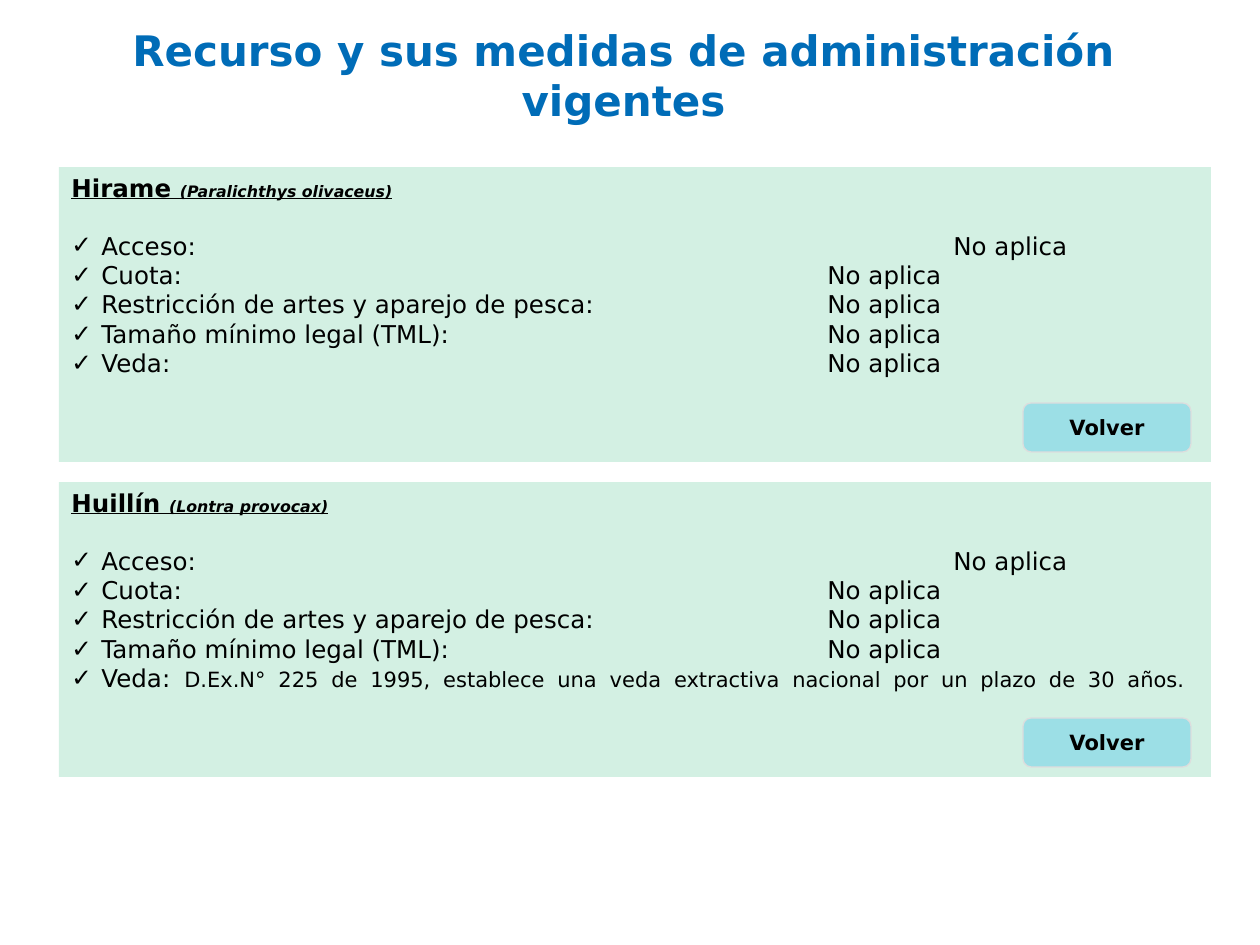
"""Builds the slide of two species and the management measures in force."""
from pptx import Presentation
from pptx.dml.color import RGBColor
from pptx.enum.shapes import MSO_SHAPE
from pptx.enum.text import MSO_ANCHOR, PP_ALIGN
from pptx.oxml.ns import qn
from pptx.util import Emu, Pt
from lxml.etree import SubElement

theme = {
    "font": "DejaVu Sans", "ink": "000000", "blue": "006CB7",
    "panel": "AAE2CA", "button": "00B0F0", "edge": "DDDDDD",
    "title": 24, "body": 14, "note": 12, "latin": 9,
}
scale = 914400 / 126


def write(para, text, size, color="ink", **form):
    run = para.add_run()
    run.text = text
    form.update(name=theme["font"], size=Pt(theme[size]))
    for key, value in form.items():
        setattr(run.font, key, value)
    run.font.color.rgb = RGBColor.from_string(theme[color])


def block(kind, box, color, alpha, anchor):
    shape = slide.shapes.add_shape(kind, *[Emu(round(n * scale)) for n in box])
    shape.shadow.inherit = False
    shape.fill.solid()
    shape.fill.fore_color.rgb = RGBColor.from_string(theme[color])
    tint = shape.fill._xPr.find(qn("a:solidFill"))[0]
    SubElement(tint, qn("a:alpha"), val=str(alpha * 1000))
    shape.line.fill.background()
    shape.text_frame.word_wrap = True
    shape.text_frame.vertical_anchor = anchor
    return shape


deck = Presentation()
deck.slide_width, deck.slide_height = [Emu(round(n * scale)) for n in (1260, 945)]
slide = deck.slides.add_slide(deck.slide_layouts[5])

title = slide.shapes.title
for side, value in {"left": 88, "top": 10, "width": 1071, "height": 129}.items():
    setattr(title, side, Emu(round(value * scale)))
title.text_frame.word_wrap = True
title.text_frame.vertical_anchor = MSO_ANCHOR.MIDDLE
head = title.text_frame.paragraphs[0]
head.alignment = PP_ALIGN.CENTER
write(head, "Recurso y sus medidas de administración vigentes", "title", "blue", bold=True)

none = "No aplica"
ban = "D.Ex.N° 225 de 1995, establece una veda extractiva nacional por un plazo de 30 años. "
species = [
    ("Hirame ", "(Paralichthys olivaceus)", none),
    ("Huillín ", "(Lontra provocax)", ban),
]
labels = ["Acceso:", "Cuota:", "Restricción de artes y aparejo de pesca:",
          "Tamaño mínimo legal (TML):", "Veda:"]
indent = round(30 * scale)

for row, (name, latin, veda) in enumerate(species):
    top = 167 + 315 * row
    panel = block(MSO_SHAPE.RECTANGLE, (59, top, 1152, 295), "panel", 51, MSO_ANCHOR.TOP)
    frame = panel.text_frame
    head = frame.paragraphs[0]
    head.alignment = PP_ALIGN.JUSTIFY
    head.space_after = Pt(16)
    write(head, name, "body", bold=True, underline=True)
    write(head, latin, "latin", bold=True, underline=True, italic=True)

    for label, value in zip(labels, [none] * 4 + [veda]):
        item = frame.add_paragraph()
        item.alignment = PP_ALIGN.JUSTIFY
        props = item._p.get_or_add_pPr()
        for key, size in {"marL": indent, "indent": -indent}.items():
            props.set(key, str(size))
        SubElement(props, qn("a:buFont"), typeface=theme["font"])
        SubElement(props, qn("a:buChar"), char="✓")
        if value == none:
            stop = 882 if label == labels[0] else 756
            tabs = SubElement(props, qn("a:tabLst"))
            SubElement(tabs, qn("a:tab"), pos=str(round(stop * scale)), algn="l")
            write(item, f"{label}\t{value}", "body")
        else:
            write(item, f"{label} ", "body")
            write(item, value, "note")
            item.add_line_break()

    button = block(MSO_SHAPE.ROUNDED_RECTANGLE, (1023, top + 236, 168, 49),
                   "button", 26, MSO_ANCHOR.MIDDLE)
    button.line.color.rgb = RGBColor.from_string(theme["edge"])
    button.line.width = Pt(0.75)
    link = button.text_frame.paragraphs[0]
    link.alignment = PP_ALIGN.CENTER
    write(link, "Volver", "note", bold=True)

deck.save("out.pptx")
